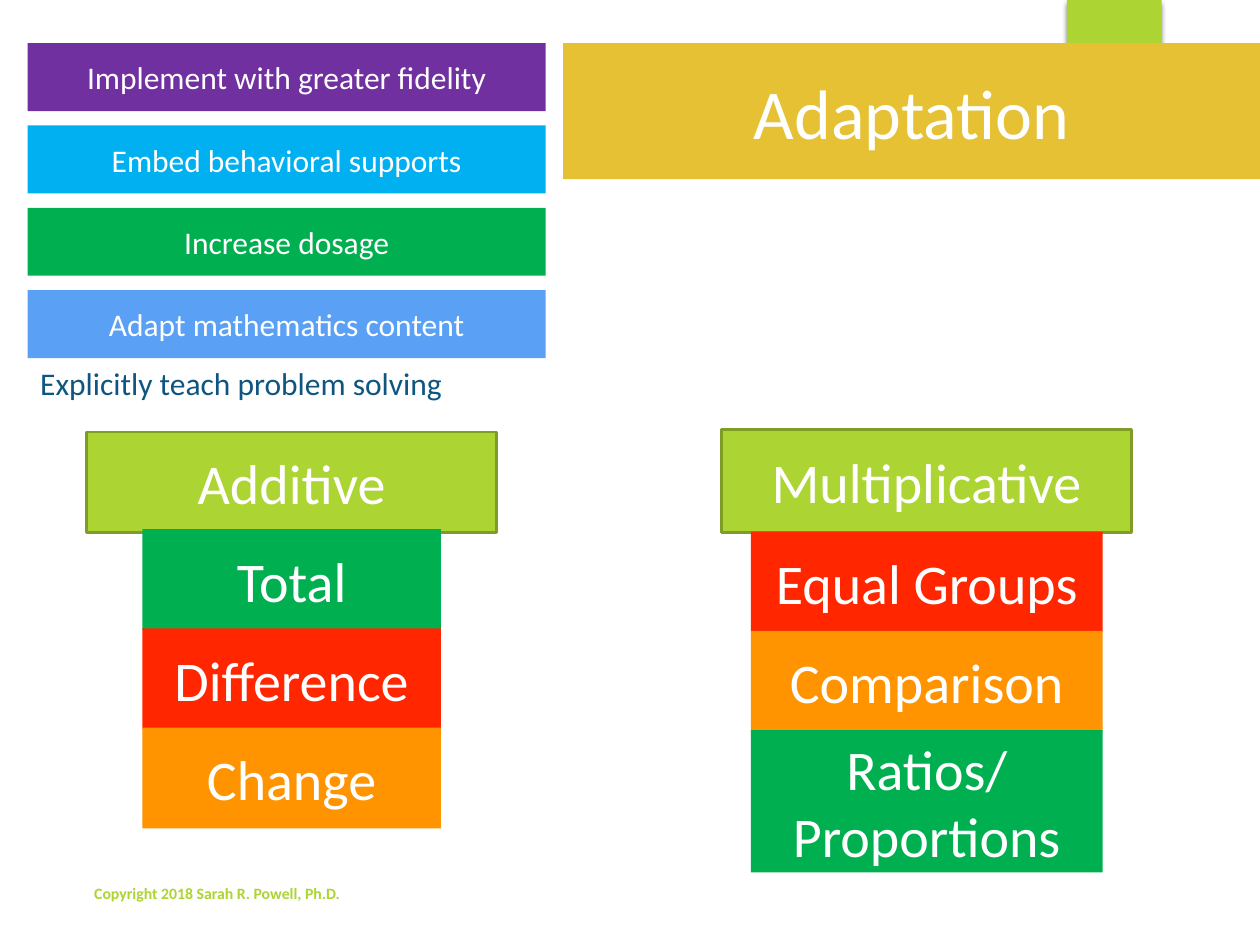
"""Build the slide on adapting mathematics content."""
from lxml.etree import SubElement
from pptx import Presentation
from pptx.dml.color import RGBColor
from pptx.enum.shapes import MSO_SHAPE
from pptx.enum.text import MSO_ANCHOR, MSO_AUTO_SIZE, PP_ALIGN
from pptx.oxml.ns import qn
from pptx.util import Cm, Pt

WHITE = RGBColor(0xFF, 0xFF, 0xFF)
LIME = RGBColor(0xAC, 0xD4, 0x33)
OLIVE = RGBColor(0x7F, 0x9D, 0x26)
GOLD = RGBColor(0xE6, 0xC1, 0x33)
PURPLE = RGBColor(0x70, 0x30, 0xA0)
SKY = RGBColor(0x00, 0xB0, 0xF0)
BLUE = RGBColor(0x5A, 0xA0, 0xF5)
NAVY = RGBColor(0x0E, 0x55, 0x80)
GREEN = RGBColor(0x00, 0xB0, 0x50)
RED = RGBColor(0xFF, 0x26, 0x00)
ORANGE = RGBColor(0xFF, 0x93, 0x00)

TITLE = "Adaptation"
STEPS = [
    ("Implement with greater fidelity", PURPLE),
    ("Embed behavioral supports", SKY),
    ("Increase dosage", GREEN),
    ("Adapt mathematics content", BLUE),
]
NOTE = "Explicitly teach problem solving"
CREDIT = "Copyright 2018 Sarah R. Powell, Ph.D."
GROUPS = [
    {
        "head": "Additive", "box": (1.75, 8.71, 8.26, 2.03),
        "left": 2.87, "top": 10.67, "width": 6.02,
        "kinds": [("Total", GREEN, 2.03), ("Difference", RED, 2.03),
                  ("Change", ORANGE, 2.03)],
    },
    {
        "head": "Multiplicative", "box": (14.55, 8.66, 8.26, 2.08),
        "left": 15.14, "top": 10.72, "width": 7.09,
        "kinds": [("Equal Groups", RED, 2.03), ("Comparison", ORANGE, 2.03),
                  ("Ratios/\nProportions", GREEN, 2.87)],
    },
]
STEP_GAP = 1.66
KIND_GAP = 2


def write(shape, text, size, color=WHITE, align=PP_ALIGN.CENTER,
          anchor=MSO_ANCHOR.MIDDLE, bold=False):
    frame = shape.text_frame
    frame.text = text
    frame.word_wrap = True
    frame.auto_size = MSO_AUTO_SIZE.NONE
    frame.vertical_anchor = anchor
    for para in frame.paragraphs:
        para.alignment = align
        font = para.font
        font.name, font.size, font.bold = "Calibri", Pt(size), bold
        font.color.rgb = color


def paint(shape, fill):
    shape.fill.solid()
    shape.fill.fore_color.rgb = fill
    shape.line.fill.background()


def block(slide, box, fill, text="", size=32):
    shape = slide.shapes.add_shape(MSO_SHAPE.RECTANGLE, *map(Cm, box))
    shape.shadow.inherit = False
    paint(shape, fill)
    if text:
        write(shape, text, size)
    return shape


def label(slide, box, *args, **style):
    shape = slide.shapes.add_textbox(*map(Cm, box))
    write(shape, *args, align=PP_ALIGN.LEFT, **style)


def add_tab(slide):
    tab = block(slide, (21.51, 0, 1.91, 3.05), LIME)
    glow = tab._element.spPr.find(qn("a:effectLst"))
    cast = SubElement(glow, qn("a:outerShdw"), blurRad=str(Pt(3)),
                      dist=str(Pt(2)), dir="5400000", rotWithShape="0")
    tone = SubElement(cast, qn("a:srgbClr"), val="000000")
    SubElement(tone, qn("a:alpha"), val="45000")
    slide.shapes.title._element.addprevious(tab._element)


def add_title(slide):
    title = slide.shapes.title
    title.left, title.top = Cm(11.35), Cm(0.87)
    title.width, title.height = Cm(14.05), Cm(2.74)
    paint(title, GOLD)
    write(title, TITLE, 40)


def main():
    deck = Presentation()
    deck.slide_width, deck.slide_height = Cm(25.4), Cm(19.05)
    slide = deck.slides.add_slide(deck.slide_layouts[5])
    add_title(slide)
    add_tab(slide)
    for row, (text, fill) in enumerate(STEPS):
        block(slide, (0.56, 0.87 + row * STEP_GAP, 10.44, 1.37), fill, text, 18)
    label(slide, (0.56, 7.21, 10.44, 1.02), NOTE, 18, NAVY,
          anchor=MSO_ANCHOR.TOP)
    for group in GROUPS:
        head = block(slide, group["box"], LIME, group["head"])
        head.line.color.rgb = OLIVE
        head.line.width = Pt(1.5)
        for row, (text, fill, height) in enumerate(group["kinds"]):
            top = group["top"] + row * KIND_GAP
            block(slide, (group["left"], top, group["width"], height), fill, text)
    label(slide, (1.65, 17.68, 10.72, 0.64), CREDIT, 9, LIME,
          anchor=MSO_ANCHOR.BOTTOM, bold=True)
    deck.save("out.pptx")


if __name__ == "__main__":
    main()
